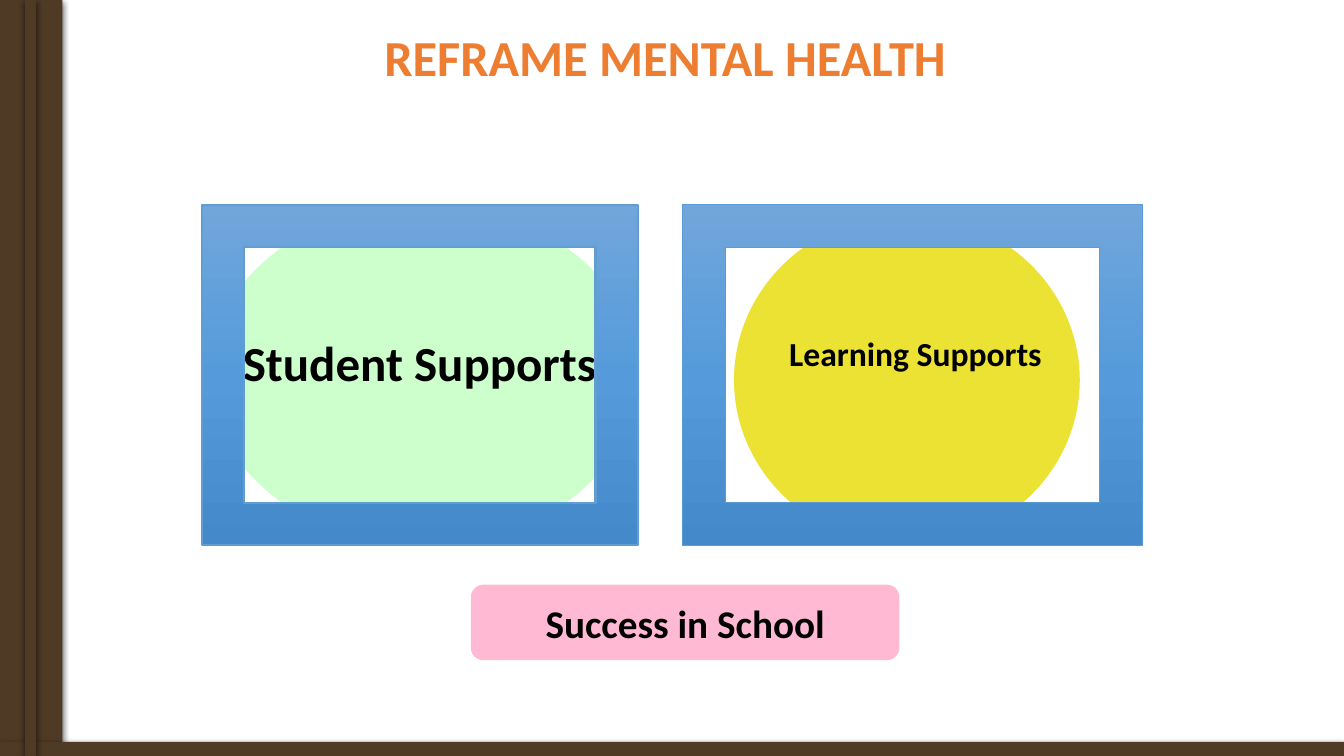
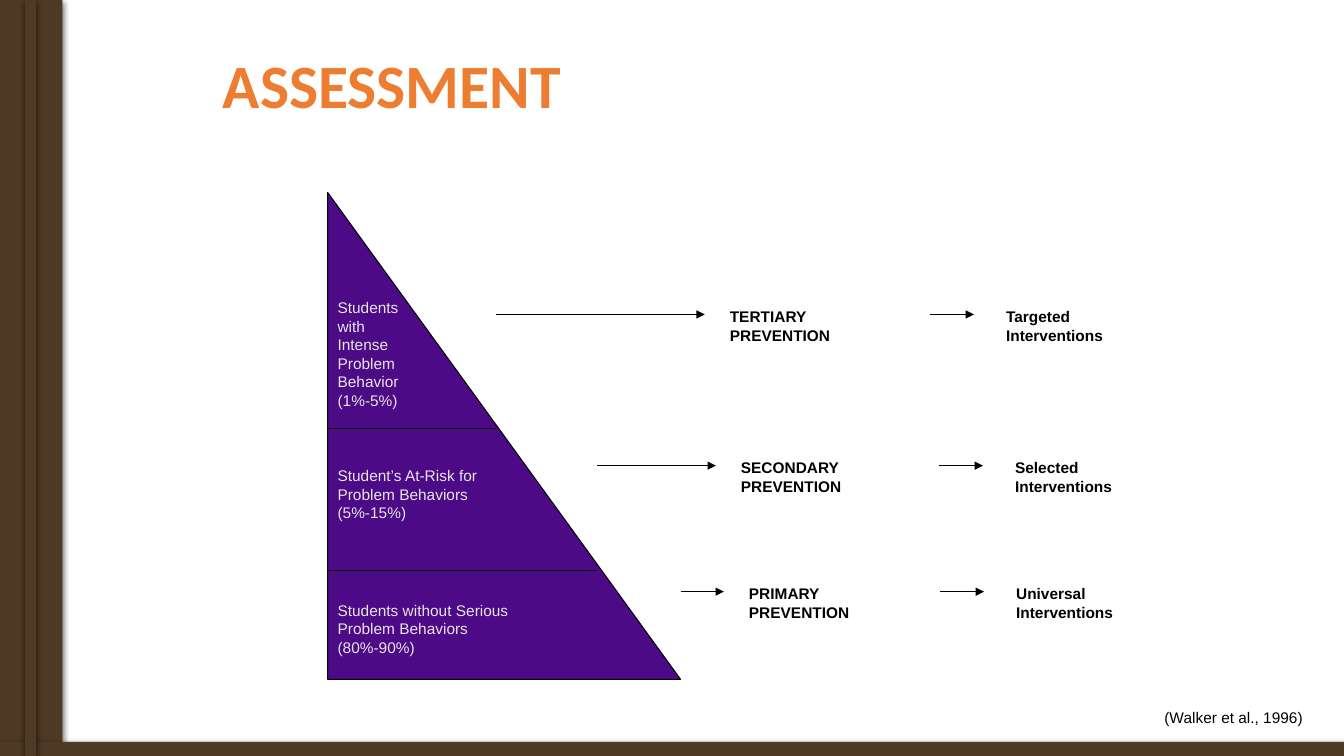
from copy import deepcopy
from dataclasses import dataclass

from lxml.etree import SubElement
from pptx import Presentation
from pptx.dml.color import RGBColor
from pptx.enum.shapes import MSO_CONNECTOR, MSO_SHAPE
from pptx.enum.text import MSO_ANCHOR, MSO_AUTO_SIZE, PP_ALIGN
from pptx.oxml import parse_xml
from pptx.oxml.ns import nsdecls, qn
from pptx.shapes.autoshape import Shape
from pptx.slide import Slide, SlideLayout
from pptx.util import Inches, Pt

WHITE = RGBColor(0xFF, 0xFF, 0xFF)
BLACK = RGBColor(0x00, 0x00, 0x00)
BROWN = RGBColor(0x4F, 0x3A, 0x25)
ORANGE = RGBColor(0xED, 0x7D, 0x31)
PINK = RGBColor(0xFF, 0xB9, 0xD2)
GREEN = RGBColor(0xCC, 0xFF, 0xCC)
YELLOW = RGBColor(0xEB, 0xE2, 0x34)
PURPLE = RGBColor(0x4C, 0x0A, 0x87)
LIGHT_GRAY = RGBColor(0xE7, 0xE6, 0xE6)
STUDENT_FRAME_LINE = RGBColor(0x62, 0x9D, 0xD1)
LEARNING_FRAME_LINE = RGBColor(0x5B, 0x9B, 0xD5)
FRAME_GRADIENT = (
    (0.0, RGBColor(0x71, 0xA6, 0xDB)),
    (0.5, RGBColor(0x55, 0x9B, 0xDB)),
    (1.0, RGBColor(0x44, 0x8A, 0xCA)),
)

HEADING_FONT = "Calibri"
BODY_FONT = "Arial"
BODY_SIZE = 11

SLIDE_WIDTH, SLIDE_HEIGHT = 13.33, 7.5
TRIANGLE_LEFT = 3.25


@dataclass(frozen=True)
class Box:
    left: float
    top: float
    width: float
    height: float

    def lengths(self) -> tuple[Inches, Inches, Inches, Inches]:
        return (Inches(self.left), Inches(self.top),
                Inches(self.width), Inches(self.height))


@dataclass(frozen=True)
class TextStyle:
    size: float
    font: str = HEADING_FONT
    color: RGBColor = BLACK
    bold: bool = True
    align: PP_ALIGN = PP_ALIGN.CENTER


@dataclass(frozen=True)
class SupportFrame:
    label: str
    label_box: Box
    label_size: float
    ellipse_box: Box
    ellipse_color: RGBColor
    frame_box: Box
    line_color: RGBColor
    line_width: float


@dataclass(frozen=True)
class TriangleLevel:
    text: str
    box: Box


@dataclass(frozen=True)
class PreventionRow:
    prevention: str
    intervention: str
    top: float
    arrow_start: float
    arrow_end: float
    prevention_width: float
    second_arrow_start: float


BAND_BOXES = (
    Box(0, 0, 0.3, SLIDE_HEIGHT),
    Box(0.32, 0, 0.3, SLIDE_HEIGHT),
    Box(0, 7.36, SLIDE_WIDTH, 0.15),
    Box(0.25, 0, 0.11, SLIDE_HEIGHT),
)

SUPPORT_FRAMES = (
    SupportFrame("Student Supports", Box(2.25, 3.25, 3.83, 0.68), 35,
                 Box(2.08, 2.03, 4.25, 3.38), GREEN,
                 Box(2, 2.03, 4.33, 3.38), STUDENT_FRAME_LINE, 1.5),
    SupportFrame("Learning Supports", Box(7.07, 3.25, 4.02, 0.5), 24,
                 Box(7.28, 2.13, 3.43, 3.28), YELLOW,
                 Box(6.77, 2.03, 4.56, 3.38), LEARNING_FRAME_LINE, 0.5),
)

TRIANGLE_LEVELS = (
    TriangleLevel("Students with Intense Problem Behavior (1%-5%)",
                  Box(TRIANGLE_LEFT, 2.91, 0.92, 1.2)),
    TriangleLevel("Student’s At-Risk for Problem Behaviors (5%-15%)",
                  Box(TRIANGLE_LEFT, 4.58, 1.67, 0.67)),
    TriangleLevel("Students without Serious Problem Behaviors (80%-90%)",
                  Box(TRIANGLE_LEFT, 5.91, 1.92, 0.67)),
)
TRIANGLE_DIVIDERS = ((4.92, 4.25), (5.92, 5.66))

PREVENTION_ROWS = (
    PreventionRow("TERTIARY PREVENTION", "Targeted Interventions",
                  3, 4.92, 6.99, 1.85, 9.22),
    PreventionRow("SECONDARY PREVENTION", "Selected Interventions",
                  4.5, 5.92, 7.1, 1.99, 9.31),
    PreventionRow("PRIMARY PREVENTION", "Universal Interventions",
                  5.75, 6.75, 7.18, 1.78, 9.32),
)

LEVEL_STYLE = TextStyle(BODY_SIZE, BODY_FONT, LIGHT_GRAY, False, PP_ALIGN.LEFT)
ROW_STYLE = TextStyle(BODY_SIZE, BODY_FONT, align=PP_ALIGN.LEFT)
CITATION_STYLE = TextStyle(BODY_SIZE, BODY_FONT, bold=False, align=PP_ALIGN.LEFT)


def write_text(shape: Shape, text: str, style: TextStyle,
               anchor: MSO_ANCHOR = MSO_ANCHOR.TOP) -> None:
    frame = shape.text_frame
    frame.text = text
    frame.word_wrap = True
    frame.auto_size = MSO_AUTO_SIZE.NONE
    frame.vertical_anchor = anchor
    paragraph = frame.paragraphs[0]
    paragraph.alignment = style.align
    font = paragraph.runs[0].font
    font.name = style.font
    font.size = Pt(style.size)
    font.bold = style.bold
    font.color.rgb = style.color


def add_text(slide: Slide, box: Box, text: str, style: TextStyle) -> None:
    write_text(slide.shapes.add_textbox(*box.lengths()), text, style)


def add_filled_shape(slide: Slide, kind: MSO_SHAPE, box: Box, color: RGBColor) -> Shape:
    shape = slide.shapes.add_shape(kind, *box.lengths())
    shape.shadow.inherit = False
    shape.fill.solid()
    shape.fill.fore_color.rgb = color
    shape.line.fill.background()
    return shape


def add_line(slide: Slide, start: float, end: float, y: float, arrow: bool = False) -> None:
    """Draw a thin horizontal line, with a head at its end if arrow is set."""
    line = slide.shapes.add_connector(
        MSO_CONNECTOR.STRAIGHT, Inches(start), Inches(y), Inches(end), Inches(y))
    line.line.color.rgb = BLACK
    line.line.width = Pt(0.75)
    if arrow:
        SubElement(line.line._get_or_add_ln(), qn("a:tailEnd"), type="triangle")
    SubElement(line.element.spPr, qn("a:effectLst"))


def add_bands(slide: Slide, layout: SlideLayout) -> None:
    """Draw the brown bands and move them to the layout that the slides share."""
    for position, box in enumerate(BAND_BOXES, start=2):
        band = add_filled_shape(slide, MSO_SHAPE.RECTANGLE, box, BROWN)
        properties = band.element.spPr
        properties.remove(properties.find(qn("a:effectLst")))
        properties.append(parse_xml(
            f'<a:effectLst {nsdecls("a")}>'
            '<a:outerShdw blurRad="57150" dist="19050" dir="5400000" rotWithShape="0">'
            '<a:srgbClr val="000000"><a:alpha val="63000"/></a:srgbClr>'
            '</a:outerShdw></a:effectLst>'))
        layout.shapes.element.insert(position, band.element)


def add_titled_slide(presentation: Presentation, layout: SlideLayout, title: str,
                     box: Box, size: float, align: PP_ALIGN) -> Slide:
    slide = presentation.slides.add_slide(layout)
    slide.background.fill.solid()
    slide.background.fill.fore_color.rgb = WHITE
    shape = slide.shapes.title
    shape.left, shape.top, shape.width, shape.height = box.lengths()
    write_text(shape, title, TextStyle(size, color=ORANGE, align=align), MSO_ANCHOR.MIDDLE)
    shape.text_frame.paragraphs[0].line_spacing = 0.9
    return slide


def add_support_frame(slide: Slide, support: SupportFrame) -> None:
    add_filled_shape(slide, MSO_SHAPE.OVAL, support.ellipse_box, support.ellipse_color)
    add_text(slide, support.label_box, support.label, TextStyle(support.label_size))
    frame = slide.shapes.add_shape(MSO_SHAPE.FRAME, *support.frame_box.lengths())
    frame.shadow.inherit = False
    frame.fill.gradient()
    frame.fill.gradient_angle = 270
    stop_list = frame.element.spPr.find(qn("a:gradFill")).find(qn("a:gsLst"))
    stop_list.insert(1, deepcopy(stop_list[0]))
    for stop, (position, color) in zip(frame.fill.gradient_stops, FRAME_GRADIENT):
        stop.position = position
        stop.color.rgb = color
    frame.line.color.rgb = support.line_color
    frame.line.width = Pt(support.line_width)


def add_prevention_row(slide: Slide, row: PreventionRow) -> None:
    arrow_y = row.top + 0.12
    second_arrow_end = row.second_arrow_start + 0.44
    intervention_left = second_arrow_end + 0.22
    intervention_width = 11.67 - intervention_left
    add_line(slide, row.arrow_start, row.arrow_end, arrow_y, arrow=True)
    add_text(slide, Box(row.arrow_end + 0.15, row.top, row.prevention_width, 0.47),
             row.prevention, ROW_STYLE)
    add_line(slide, row.second_arrow_start, second_arrow_end, arrow_y, arrow=True)
    add_text(slide, Box(intervention_left, row.top, intervention_width, 0.47),
             row.intervention, ROW_STYLE)


def fill_reframe_slide(slide: Slide) -> None:
    success = add_filled_shape(slide, MSO_SHAPE.ROUNDED_RECTANGLE,
                               Box(4.67, 5.8, 4.25, 0.75), PINK)
    write_text(success, "Success in School", TextStyle(28), MSO_ANCHOR.MIDDLE)
    for support in SUPPORT_FRAMES:
        add_support_frame(slide, support)


def fill_assessment_slide(slide: Slide) -> None:
    triangle = add_filled_shape(slide, MSO_SHAPE.RIGHT_TRIANGLE,
                                Box(TRIANGLE_LEFT, 1.91, 3.5, 4.83), PURPLE)
    triangle.line.color.rgb = BLACK
    triangle.line.width = Pt(0.75)
    for end, y in TRIANGLE_DIVIDERS:
        add_line(slide, TRIANGLE_LEFT, end, y)
    for level in TRIANGLE_LEVELS:
        add_text(slide, level.box, level.text, LEVEL_STYLE)
    for row in PREVENTION_ROWS:
        add_prevention_row(slide, row)
    add_text(slide, Box(11.45, 6.98, 1.75, 0.29), "(Walker et al., 1996)", CITATION_STYLE)


def main() -> None:
    presentation = Presentation()
    presentation.slide_width = Inches(SLIDE_WIDTH)
    presentation.slide_height = Inches(SLIDE_HEIGHT)
    layout = presentation.slide_layouts.get_by_name("Title Only")

    reframe = add_titled_slide(presentation, layout, "REFRAME MENTAL HEALTH ",
                               Box(2.03, 0.18, 9.25, 0.84), 36, PP_ALIGN.CENTER)
    add_bands(reframe, layout)
    fill_reframe_slide(reframe)

    assessment = add_titled_slide(presentation, layout, "ASSESSMENT",
                                  Box(2.11, 0.3, 9.17, 1.15), 44, PP_ALIGN.LEFT)
    fill_assessment_slide(assessment)

    presentation.save("out.pptx")


if __name__ == "__main__":
    main()
